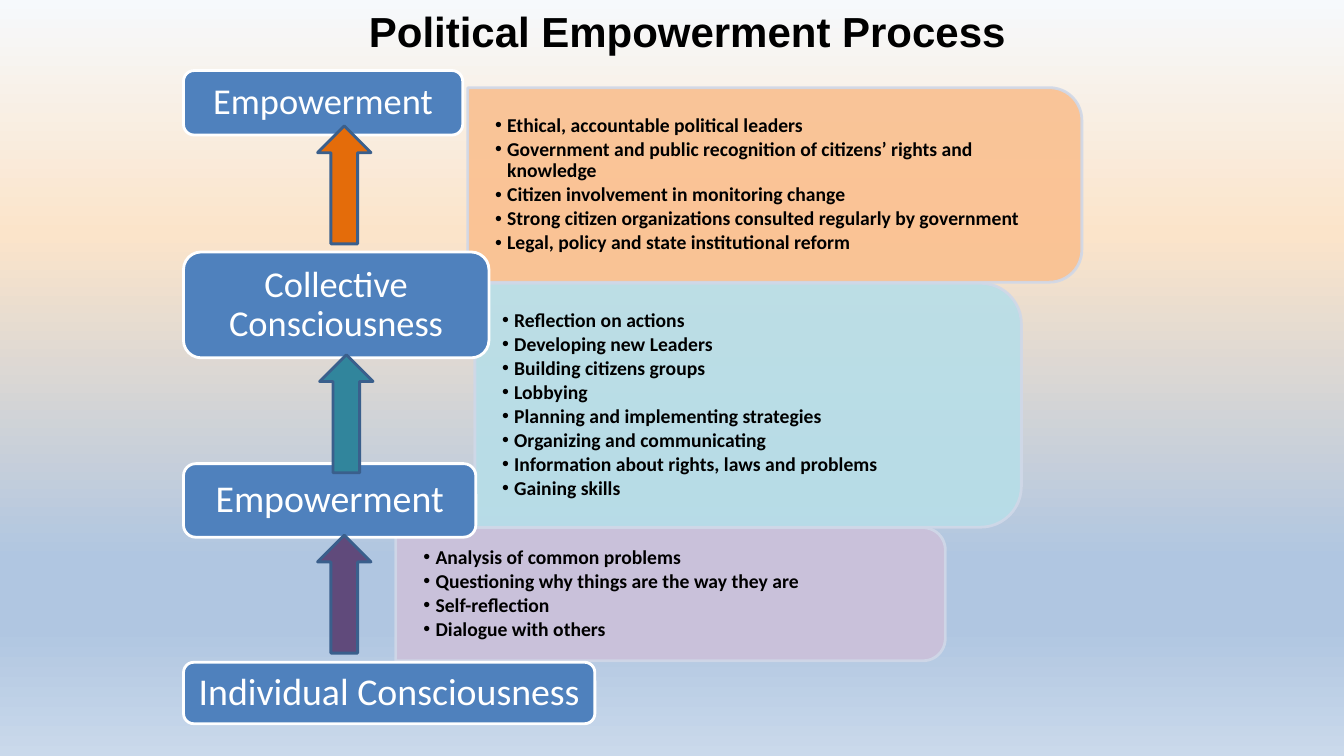
from dataclasses import dataclass

import pptx
import pptx.dml.color
import pptx.enum.shapes
import pptx.enum.text
import pptx.oxml.ns
import pptx.oxml.xmlchemy
import pptx.util
from lxml import etree

SHAPE = pptx.enum.shapes.MSO_SHAPE
ALIGN = pptx.enum.text.PP_ALIGN
MIDDLE = pptx.enum.text.MSO_ANCHOR.MIDDLE
NO_FIT = pptx.enum.text.MSO_AUTO_SIZE.NONE
Pt = pptx.util.Pt
qn = pptx.oxml.ns.qn

COMPARISON_LAYOUT = 4
EMU_PER_PX = 9144
BODY_INSET = 0.0488  # text inset of a rounded panel, as a share of its height


@dataclass(frozen=True)
class Theme:
    title_font: str = "Arial"
    body_font: str = "Calibri"
    title_size: int = 30
    list_size: int = 14
    text: str = "000000"
    node_text: str = "FFFFFF"
    node_fill: str = "4F81BD"
    node_line: str = "FFFFFF"
    panel_line: str = "D0D8E8"
    arrow_line: str = "3A5F8C"
    line_width: int = 2
    panel_opacity: int = 90
    background: tuple[tuple[int, str], ...] = (
        (0, "F6F9FC"), (31, "FBE4CA"), (74, "B0C6E1"), (83, "B0C6E1"), (100, "CAD9EB"))


@dataclass(frozen=True)
class Box:
    x: int
    y: int
    w: int
    h: int


@dataclass(frozen=True)
class Panel:
    box: Box
    fill: str
    items: tuple[str, ...]


@dataclass(frozen=True)
class Node:
    box: Box
    text: str
    size: int


@dataclass(frozen=True)
class Arrow:
    x: int
    y: int
    fill: str


THEME = Theme()
TITLE_BOX = Box(260, 0, 844, 61)
ARROW_W, ARROW_H = 53, 117
NODE_X = 182

PANELS = (
    Panel(Box(464, 87, 609, 193), "FAC090", (
        "Ethical, accountable political leaders",
        "Government and public recognition of citizens’ rights and knowledge",
        "Citizen involvement in monitoring change",
        "Strong citizen organizations consulted regularly by government",
        "Legal, policy and state institutional reform")),
    Panel(Box(471, 281, 542, 242), "B7DEE8", (
        "Reflection on actions",
        "Developing new Leaders",
        "Building citizens groups",
        "Lobbying",
        "Planning and implementing strategies",
        "Organizing and communicating",
        "Information about rights, laws and problems",
        "Gaining skills")),
    Panel(Box(393, 523, 545, 132), "CCC1DA", (
        "Analysis of common problems",
        "Questioning why things are the way they are",
        "Self-reflection",
        "Dialogue with others")),
)
NODES = (
    Node(Box(NODE_X, 70, 277, 64), "Empowerment", 26),
    Node(Box(NODE_X, 250, 303, 105), "Collective Consciousness", 26),
    Node(Box(NODE_X, 657, 408, 61), "Individual Consciousness", 27),
    Node(Box(NODE_X, 460, 290, 73), "Empowerment", 27),
)
ARROWS = (Arrow(315, 125, "E46C0A"), Arrow(317, 352, "31859C"), Arrow(315, 531, "604A7B"))


def px(n: int) -> int:
    return n * EMU_PER_PX


def rgb(color: str) -> pptx.dml.color.RGBColor:
    return pptx.dml.color.RGBColor.from_string(color)


def place(sp, box: Box) -> None:
    sp.left, sp.top, sp.width, sp.height = map(px, (box.x, box.y, box.w, box.h))


def add_run(p, text: str, font: str, size: int, color: str, bold: bool = False) -> None:
    r = p.add_run()
    r.text = text
    r.font.name, r.font.size, r.font.bold = font, Pt(size), bold
    r.font.color.rgb = rgb(color)


def set_frame(tf, margin_x: int = 10, margin_y: int = 5) -> None:
    tf.word_wrap = True
    tf.auto_size = NO_FIT
    tf.vertical_anchor = MIDDLE
    tf.margin_left = tf.margin_right = px(margin_x)
    tf.margin_top = tf.margin_bottom = px(margin_y)


def add_shape(slide, kind, box: Box, fill: str, line: str):
    sp = slide.shapes.add_shape(kind, *map(px, (box.x, box.y, box.w, box.h)))
    sp.shadow.inherit = False
    sp.fill.solid()
    sp.fill.fore_color.rgb = rgb(fill)
    sp.line.color.rgb = rgb(line)
    sp.line.width = Pt(THEME.line_width)
    return sp


def paint_background(slide) -> None:
    fill = slide.background.fill
    fill.gradient()
    fill.gradient_angle = 270
    stops = next(slide.element.iter(qn("a:gsLst")))
    for stop in list(stops):
        stops.remove(stop)
    for percent, color in THEME.background:
        stop = etree.SubElement(stops, qn("a:gs"), pos=str(percent * 1000))
        etree.SubElement(stop, qn("a:srgbClr"), val=color)


def add_title(slide, text: str) -> None:
    sp = slide.shapes.title
    place(sp, TITLE_BOX)
    set_frame(sp.text_frame)
    p = sp.text_frame.paragraphs[0]
    p.alignment = ALIGN.CENTER
    add_run(p, text, THEME.title_font, THEME.title_size, THEME.text, bold=True)


def add_panel(slide, panel: Panel, body) -> None:
    """Draw a panel rounded on its right side and lay its list over it."""
    box = panel.box
    shift = (box.w - box.h) // 2
    upright = Box(box.x + shift, box.y - shift, box.h, box.w)
    sp = add_shape(slide, SHAPE.ROUND_2_SAME_RECTANGLE, upright, panel.fill, THEME.panel_line)
    sp.rotation = 90
    for color in sp.element.spPr.iter(qn("a:srgbClr")):
        etree.SubElement(color, qn("a:alpha"), val=str(THEME.panel_opacity * 1000))

    inset = round(box.h * BODY_INSET)
    place(body, Box(box.x, box.y + inset, box.w - inset, box.h - 2 * inset))
    slide.shapes.element.append(body.element)
    tf = body.text_frame
    set_frame(tf, 27, 14)
    for i, item in enumerate(panel.items):
        p = tf.add_paragraph() if i else tf.paragraphs[0]
        p.level = 1
        p.alignment = ALIGN.LEFT
        p_pr = p._p.get_or_add_pPr()
        p_pr.set("marL", str(px(12)))
        p_pr.set("indent", str(px(-12)))
        etree.SubElement(p_pr, qn("a:buFont"), typeface="Arial")
        etree.SubElement(p_pr, qn("a:buChar"), char="•")
        p.line_spacing, p.space_before, p.space_after = 0.9, Pt(0), Pt(2)
        add_run(p, item, THEME.body_font, THEME.list_size, THEME.text, bold=True)


def add_node(slide, node: Node) -> None:
    sp = add_shape(slide, SHAPE.ROUNDED_RECTANGLE, node.box, THEME.node_fill, THEME.node_line)
    set_frame(sp.text_frame)
    p = sp.text_frame.paragraphs[0]
    p.alignment = ALIGN.CENTER
    p.line_spacing = 0.9
    add_run(p, node.text, THEME.body_font, node.size, THEME.node_text)


def main() -> None:
    prs = pptx.Presentation()
    prs.slide_width, prs.slide_height = px(1333), px(750)
    slide = prs.slides.add_slide(prs.slide_layouts[COMPARISON_LAYOUT])
    paint_background(slide)
    add_title(slide, "Political Empowerment Process")
    *bodies, spare = list(slide.placeholders)[1:]
    spare.element.getparent().remove(spare.element)
    for panel, body in zip(PANELS, bodies):
        add_panel(slide, panel, body)
    for node in NODES:
        add_node(slide, node)
    for arrow in ARROWS:
        box = Box(arrow.x, arrow.y, ARROW_W, ARROW_H)
        add_shape(slide, SHAPE.UP_ARROW, box, arrow.fill, THEME.arrow_line)
    prs.save("out.pptx")


if __name__ == "__main__":
    main()
